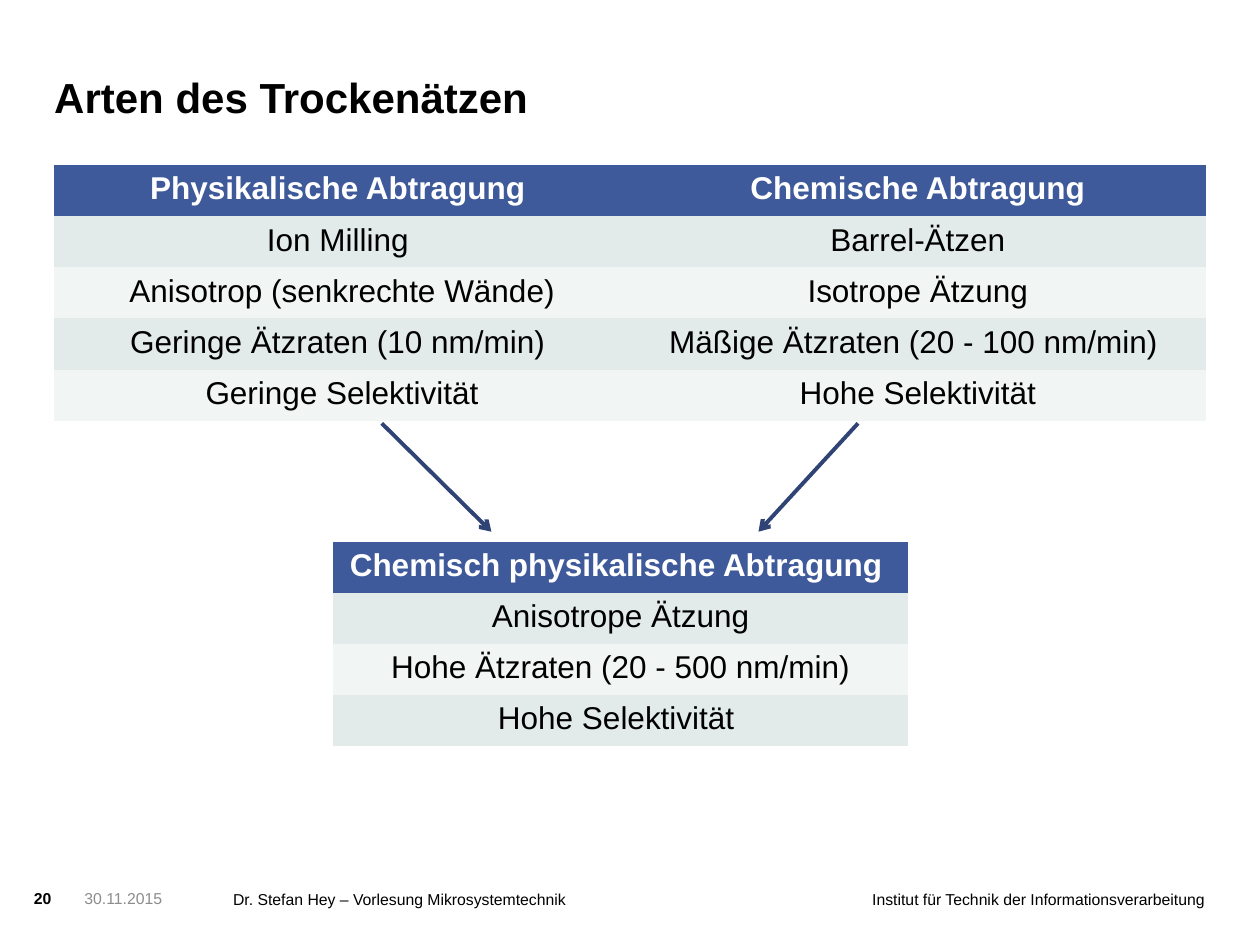
"""Builds a slide that compares kinds of dry etching in two tables joined by arrows."""
from typing import NamedTuple

from lxml import etree
from pptx import Presentation
from pptx import util as u
from pptx.dml.color import RGBColor
from pptx.enum import shapes, text
from pptx.oxml import ns

BLACK = RGBColor(0x00, 0x00, 0x00)
WHITE = RGBColor(0xFF, 0xFF, 0xFF)
GREY = RGBColor(0x8C, 0x8C, 0x8C)
HEADER_BLUE = RGBColor(0x3F, 0x5A, 0x9A)
ARROW_BLUE = RGBColor(0x2F, 0x43, 0x74)
BANDS = (RGBColor(0xF1, 0xF5, 0xF4), RGBColor(0xE2, 0xEB, 0xE9))
PLAIN_TABLE_STYLE = "{2D5ABB26-0587-4C30-8999-92F81FD0307C}"
LEFT, CENTER, RIGHT = text.PP_ALIGN.LEFT, text.PP_ALIGN.CENTER, text.PP_ALIGN.RIGHT


class Box(NamedTuple):
    left: float
    top: float
    width: float
    height: float

    def lengths(self) -> list:
        return [u.Inches(value) for value in self]


class Label(NamedTuple):
    words: str
    box: Box
    align: text.PP_ALIGN = LEFT
    color: RGBColor = BLACK
    bold: bool = False


class Comparison(NamedTuple):
    box: Box
    rows: tuple


class Arrow(NamedTuple):
    start: tuple
    end: tuple


FOOTER = (
    Label("Institut für Technik der Informationsverarbeitung", Box(6.57, 7.06, 2.99, 0.39), RIGHT),
    Label("20", Box(0.27, 7.05, 0.36, 0.24), bold=True),
    Label("Dr. Stefan Hey – Vorlesung Mikrosystemtechnik", Box(1.85, 7.06, 2.99, 0.39)),
    Label("30.11.2015", Box(0.67, 7.05, 1.14, 0.39), color=GREY),
)
COMPARISONS = (
    Comparison(Box(0.43, 1.31, 9.14, 2.03), (
        ("Physikalische Abtragung ", "Chemische Abtragung"),
        ("Ion Milling ", "Barrel-Ätzen"),
        ("Anisotrop (senkrechte Wände)", "Isotrope Ätzung"),
        ("Geringe Ätzraten (10 nm/min) ", "Mäßige Ätzraten (20 - 100 nm/min) "),
        ("Geringe Selektivität", "Hohe Selektivität"),
    )),
    Comparison(Box(2.64, 4.3, 4.57, 1.62), (
        ("Chemisch physikalische Abtragung ",),
        ("Anisotrope Ätzung",),
        ("Hohe Ätzraten (20 - 500 nm/min)",),
        ("Hohe Selektivität ",),
    )),
)
ARROWS = (Arrow((3.03, 3.36), (3.9, 4.22)), Arrow((6.81, 3.36), (6.02, 4.22)))


def write(frame, words: str, *, size: float, color: RGBColor = BLACK,
          bold: bool = False, align: text.PP_ALIGN = LEFT) -> None:
    paragraph = frame.paragraphs[0]
    paragraph.alignment = align
    run = paragraph.add_run()
    run.text = words
    run.font.name = "Arial"
    run.font.size = u.Pt(size)
    run.font.bold = bold
    run.font.color.rgb = color


def prepare_frame(frame, anchor: text.MSO_ANCHOR) -> None:
    frame.margin_left = frame.margin_right = frame.margin_top = frame.margin_bottom = 0
    frame.word_wrap = True
    frame.auto_size = text.MSO_AUTO_SIZE.NONE
    frame.vertical_anchor = anchor


def add_title(slide, words: str, box: Box) -> None:
    title = slide.shapes.title
    title.left, title.top, title.width, title.height = box.lengths()
    prepare_frame(title.text_frame, text.MSO_ANCHOR.BOTTOM)
    write(title.text_frame, words, size=24, bold=True)


def add_label(slide, label: Label) -> None:
    frame = slide.shapes.add_textbox(*label.box.lengths()).text_frame
    prepare_frame(frame, text.MSO_ANCHOR.TOP)
    write(frame, label.words, size=9, color=label.color, bold=label.bold, align=label.align)


def add_comparison(slide, comparison: Comparison) -> None:
    rows = comparison.rows
    shape = slide.shapes.add_table(len(rows), len(rows[0]), *comparison.box.lengths())
    table = shape.table
    table.horz_banding = False
    shape._element.find(".//" + ns.qn("a:tableStyleId")).text = PLAIN_TABLE_STYLE
    for row_index, row in enumerate(rows):
        is_header = row_index == 0
        for column_index, words in enumerate(row):
            cell = table.cell(row_index, column_index)
            cell.fill.solid()
            cell.fill.fore_color.rgb = HEADER_BLUE if is_header else BANDS[row_index % 2]
            write(cell.text_frame, words, size=18, color=WHITE if is_header else BLACK,
                  bold=is_header, align=CENTER)


def add_arrow(slide, arrow: Arrow) -> None:
    points = [u.Inches(value) for value in arrow.start + arrow.end]
    connector = slide.shapes.add_connector(shapes.MSO_CONNECTOR.STRAIGHT, *points)
    connector.line.color.rgb = ARROW_BLUE
    connector.line.width = u.Pt(2.25)
    properties = connector._element.spPr
    line = properties.find(ns.qn("a:ln"))
    etree.SubElement(line, ns.qn("a:tailEnd"), type="arrow")
    etree.SubElement(properties, ns.qn("a:effectLst"))


def main() -> None:
    presentation = Presentation()
    presentation.slide_width = u.Inches(10)
    presentation.slide_height = u.Inches(7.5)
    slide = presentation.slides.add_slide(presentation.slide_layouts[5])
    add_title(slide, "Arten des Trockenätzen", Box(0.43, 0.36, 7.56, 0.61))
    for label in FOOTER:
        add_label(slide, label)
    for comparison in COMPARISONS:
        add_comparison(slide, comparison)
    for arrow in ARROWS:
        add_arrow(slide, arrow)
    presentation.save("out.pptx")


if __name__ == "__main__":
    main()
